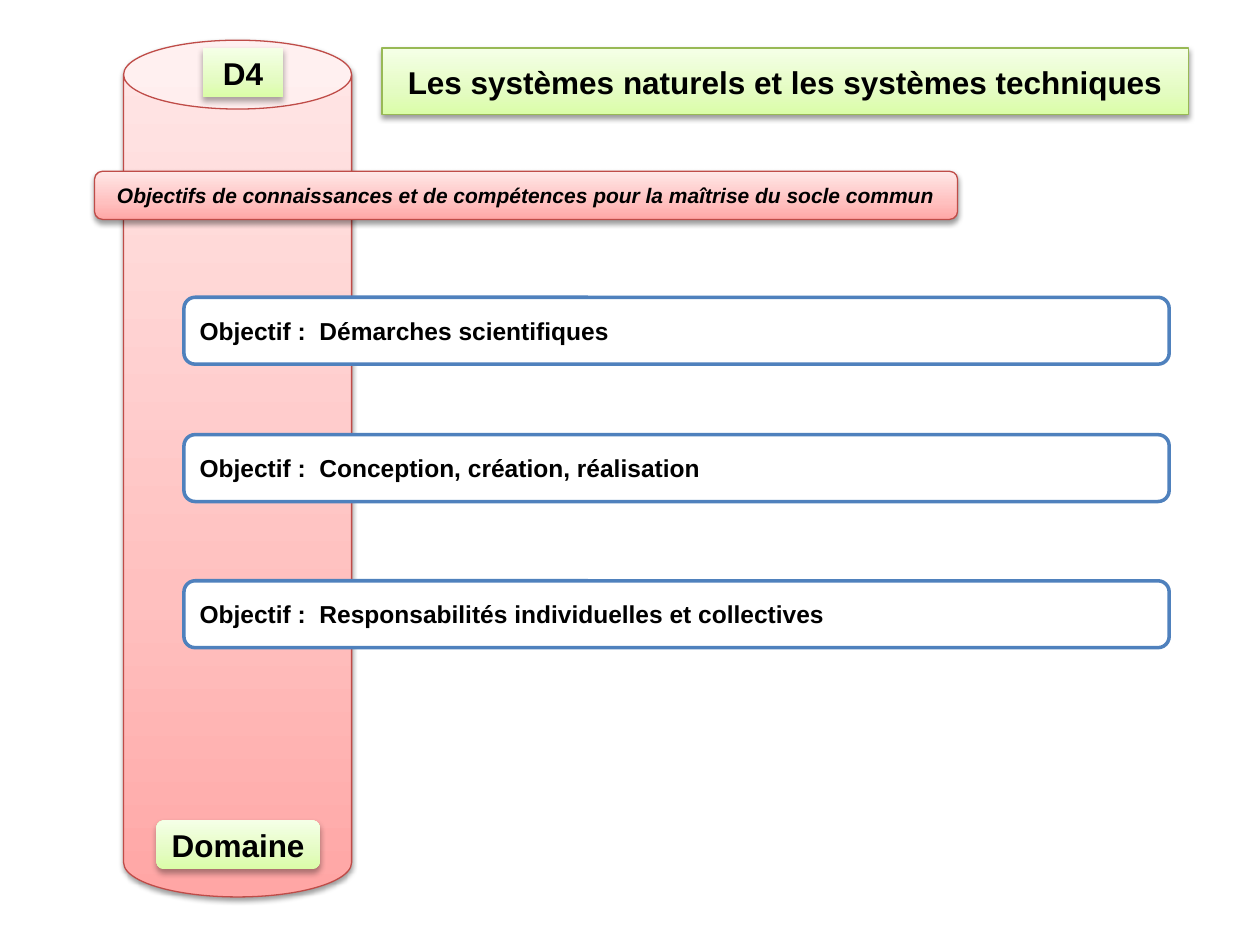
from copy import deepcopy

from lxml import etree
from pptx import Presentation
from pptx.dml.color import RGBColor
from pptx.enum import shapes, text
from pptx.oxml import ns
from pptx.util import Pt

BLACK = RGBColor(0x00, 0x00, 0x00)
WHITE = RGBColor(0xFF, 0xFF, 0xFF)
BLUE = RGBColor(0x4F, 0x81, 0xBD)
RED_LINE = RGBColor(0xBF, 0x4C, 0x48)
GREEN_LINE = RGBColor(0x98, 0xB9, 0x55)
REDS = [RGBColor(0xFF, 0xA6, 0xA5), RGBColor(0xFF, 0xC0, 0xBF), RGBColor(0xFF, 0xE7, 0xE7)]
GREENS = [RGBColor(0xDA, 0xFD, 0xA7), RGBColor(0xE4, 0xFC, 0xC2), RGBColor(0xF5, 0xFF, 0xE7)]


def shade(shape, colours, line_colour=None):
    shape.fill.gradient()
    shape.fill.gradient_angle = 90
    stop_list = shape._element.spPr.find(".//" + ns.qn("a:gsLst"))
    stop_list.append(deepcopy(stop_list[-1]))
    for stop, position, colour in zip(shape.fill.gradient_stops, (0, 0.35, 1), colours):
        stop.position = position
        stop.color.rgb = colour
    if line_colour is None:
        shape.line.fill.background()
        blur, distance, alpha = 3.5, 2.2, 32
    else:
        shape.line.color.rgb = line_colour
        shape.line.width = Pt(0.75)
        blur, distance, alpha = 3.1, 1.6, 38
    effects = shape._element.spPr.find(ns.qn("a:effectLst"))
    if effects is None:
        effects = etree.SubElement(shape._element.spPr, ns.qn("a:effectLst"))
    shadow = etree.SubElement(effects, ns.qn("a:outerShdw"), blurRad=str(Pt(blur)),
                              dist=str(Pt(distance)), dir="5400000", rotWithShape="0")
    shadow_colour = etree.SubElement(shadow, ns.qn("a:srgbClr"), val="000000")
    etree.SubElement(shadow_colour, ns.qn("a:alpha"), val=str(alpha * 1000))


def write(shape, wording, size, align=text.PP_ALIGN.CENTER, italic=False):
    frame = shape.text_frame
    frame.text = wording
    frame.word_wrap = True
    frame.auto_size = text.MSO_AUTO_SIZE.NONE
    frame.vertical_anchor = text.MSO_ANCHOR.MIDDLE
    frame.paragraphs[0].alignment = align
    font = frame.paragraphs[0].runs[0].font
    font.name = "Arial"
    font.size = Pt(size)
    font.bold = True
    font.italic = italic
    font.color.rgb = BLACK


prs = Presentation()
prs.slide_width, prs.slide_height = Pt(720), Pt(540)
slide = prs.slides.add_slide(prs.slide_layouts[5])
add_shape = slide.shapes.add_shape
ROUNDED = shapes.MSO_SHAPE.ROUNDED_RECTANGLE

title = slide.shapes.title
title.left, title.top, title.width, title.height = Pt(218.2), Pt(27.4), Pt(460.8), Pt(38.2)
outline = etree.SubElement(title._element.spPr, ns.qn("a:prstGeom"), prst="roundRect")
etree.SubElement(outline, ns.qn("a:avLst"))
shade(title, GREENS, GREEN_LINE)
write(title, "Les systèmes naturels et les systèmes techniques", 18)

pillar = add_shape(shapes.MSO_SHAPE.CAN, Pt(70.6), Pt(23), Pt(130.3), Pt(489.6))
pillar.adjustments[0] = 0.302
pillar.shadow.inherit = False
shade(pillar, REDS, RED_LINE)

domain_code = add_shape(shapes.MSO_SHAPE.RECTANGLE, Pt(115.9), Pt(27.4), Pt(46.1), Pt(28.1))
domain_code.shadow.inherit = False
shade(domain_code, GREENS)
write(domain_code, "D4", 18)

objectives = [
    (169.9, "Démarches scientifiques"),
    (248.4, "Conception, création, réalisation"),
    (331.9, "Responsabilités individuelles et collectives"),
]
for top, objective in objectives:
    box = add_shape(ROUNDED, Pt(105.1), Pt(top), Pt(563), Pt(38.2))
    box.shadow.inherit = False
    box.fill.solid()
    box.fill.fore_color.rgb = WHITE
    box.line.color.rgb = BLUE
    box.line.width = Pt(2)
    write(box, f"Objectif :  {objective}", 14, text.PP_ALIGN.LEFT)

banner = add_shape(ROUNDED, Pt(54), Pt(97.9), Pt(493.2), Pt(27.5))
banner.shadow.inherit = False
shade(banner, REDS, RED_LINE)
write(banner, "Objectifs de connaissances et de compétences pour la maîtrise du socle commun",
      12, italic=True)

domain = add_shape(ROUNDED, Pt(89.3), Pt(468.7), Pt(93.6), Pt(28.1))
domain.shadow.inherit = False
shade(domain, GREENS)
write(domain, "Domaine", 18)
domain.text_frame.word_wrap = False

prs.save("out.pptx")
